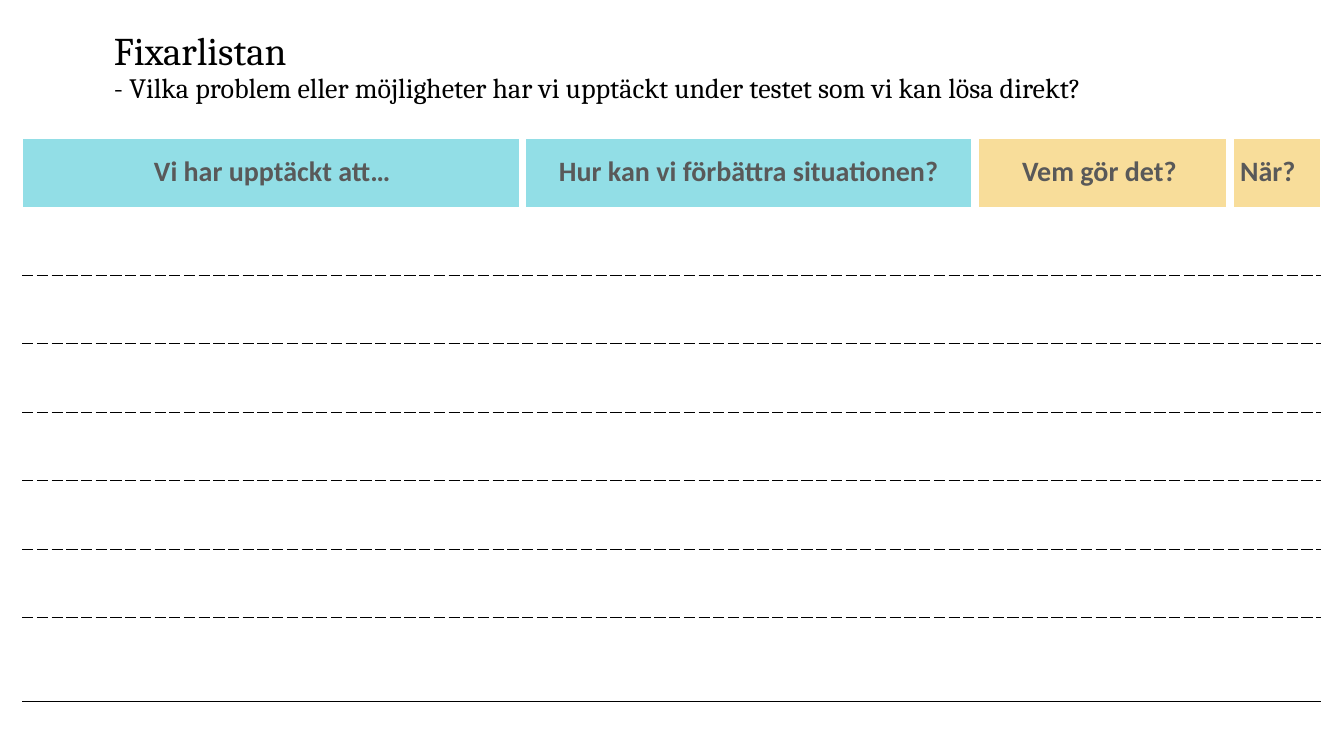
from lxml.etree import SubElement
from pptx import Presentation
from pptx.dml.color import RGBColor
from pptx.enum.text import MSO_ANCHOR, MSO_AUTO_SIZE, PP_ALIGN
from pptx.oxml.ns import qn
from pptx.util import Inches, Pt

BLACK = RGBColor(0x00, 0x00, 0x00)
WHITE = RGBColor(0xFF, 0xFF, 0xFF)
GREY = RGBColor(0x59, 0x59, 0x59)
TURQUOISE = RGBColor(0x92, 0xDE, 0xE6)
SAND = RGBColor(0xF8, 0xDD, 0x9A)

GAP = (WHITE, 6, "solid")
EDGE = (WHITE, 1, "solid")
DASHED = (BLACK, 1, "sysDash")
SOLID = (BLACK, 1, "solid")

COLUMNS = [
    ("Vi har upptäckt att…", 4.96, TURQUOISE, PP_ALIGN.CENTER),
    ("Hur kan vi förbättra situationen?", 4.49, TURQUOISE, PP_ALIGN.CENTER),
    ("Vem gör det? ", 2.53, SAND, PP_ALIGN.CENTER),
    ("När?", 0.9, SAND, PP_ALIGN.LEFT),
]
ROW_HEIGHTS = [0.68] * 7 + [0.83]


class FixListSlide:
    title_font = "Cambria"
    table_font = "Calibri"

    def __init__(self, deck):
        self.slide = deck.slides.add_slide(deck.slide_layouts[5])

    def style(self, span, name, size, color, bold=False):
        font = span.font
        font.name, font.size, font.bold = name, Pt(size), bold
        font.color.rgb = color

    def add_title(self, heading, question):
        box = self.slide.shapes.title
        box.left, box.top = Inches(1.03), Inches(0.13)
        box.width, box.height = Inches(12.16), Inches(1.09)
        frame = box.text_frame
        frame.auto_size = MSO_AUTO_SIZE.NONE
        frame.vertical_anchor = MSO_ANCHOR.MIDDLE
        frame.text = f"{heading}\v{question}"
        para = frame.paragraphs[0]
        para.alignment = PP_ALIGN.LEFT
        para.line_spacing = 0.9
        for span, size in zip(para.runs, (28, 20)):
            self.style(span, self.title_font, size, BLACK)

    def set_borders(self, cell, left, right, top, bottom):
        """Draw the given sides; a side that is None has no line."""
        properties = cell._tc.get_or_add_tcPr()
        for side, border in zip("LRTB", (left, right, top, bottom)):
            line = SubElement(properties, qn(f"a:ln{side}"))
            if border is None:
                SubElement(line, qn("a:noFill"))
                continue
            color, width, dash = border
            line.set("w", str(Pt(width)))
            fill = SubElement(line, qn("a:solidFill"))
            SubElement(fill, qn("a:srgbClr"), val=str(color))
            SubElement(line, qn("a:prstDash"), val=dash)

    def fill_header_cell(self, cell, text, color, alignment):
        cell.fill.solid()
        cell.fill.fore_color.rgb = color
        cell.vertical_anchor = MSO_ANCHOR.MIDDLE
        cell.text = text
        para = cell.text_frame.paragraphs[0]
        para.alignment = alignment
        self.style(para.runs[0], self.table_font, 20, GREY, bold=True)

    def add_table(self):
        width = sum(column[1] for column in COLUMNS)
        table = self.slide.shapes.add_table(
            len(ROW_HEIGHTS), len(COLUMNS), Inches(0.22), Inches(1.37),
            Inches(width), Inches(sum(ROW_HEIGHTS))).table
        table.first_row = table.horz_banding = False
        for column, (_, column_width, _, _) in zip(table.columns, COLUMNS):
            column.width = Inches(column_width)
        for row, height in zip(table.rows, ROW_HEIGHTS):
            row.height = Inches(height)

        last_column, last_row = len(COLUMNS) - 1, len(ROW_HEIGHTS) - 1
        for index, (text, _, color, alignment) in enumerate(COLUMNS):
            cell = table.cell(0, index)
            self.set_borders(cell, GAP if index else EDGE,
                             GAP if index < last_column else EDGE, EDGE, None)
            self.fill_header_cell(cell, text, color, alignment)

        for row in range(1, last_row + 1):
            top = DASHED if row > 1 else None
            bottom = DASHED if row < last_row else SOLID
            for index in range(len(COLUMNS)):
                cell = table.cell(row, index)
                self.set_borders(cell, GAP if index in (1, 2) else None,
                                 GAP if index < 2 else None, top, bottom)
                cell.fill.background()
            table.cell(row, 2).merge(table.cell(row, last_column))


def main():
    deck = Presentation()
    deck.slide_width, deck.slide_height = Inches(13.33), Inches(7.5)
    page = FixListSlide(deck)
    page.add_title(
        "Fixarlistan",
        "- Vilka problem eller möjligheter har vi upptäckt under testet "
        "som vi kan lösa direkt?")
    page.add_table()
    deck.save("out.pptx")


if __name__ == "__main__":
    main()
